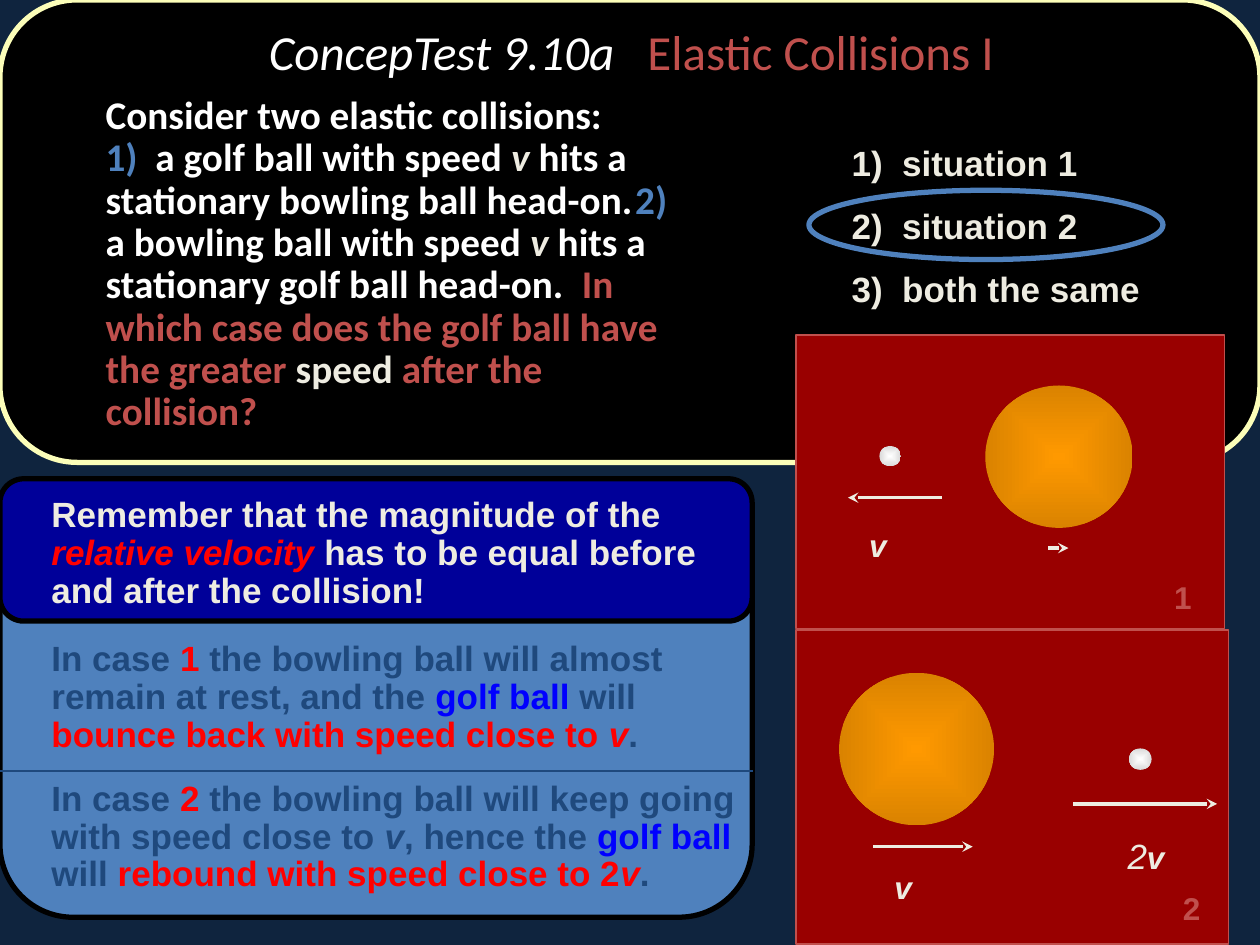
from lxml import etree
from pptx import Presentation
from pptx.dml.color import RGBColor
from pptx.enum.shapes import MSO_CONNECTOR, MSO_SHAPE as SHAPE
from pptx.enum.text import MSO_ANCHOR, PP_ALIGN
from pptx.oxml import parse_xml
from pptx.oxml.ns import nsdecls, qn
from pptx.util import Inches, Pt

NAVY = RGBColor(0x0F, 0x24, 0x3E)
BLACK = RGBColor(0x00, 0x00, 0x00)
WHITE = RGBColor(0xFF, 0xFF, 0xFF)
CREAM = RGBColor(0xEE, 0xEC, 0xE1)
YELLOW = RGBColor(0xFC, 0xFE, 0xB9)
SKY = RGBColor(0x4F, 0x81, 0xBD)
DEEP_BLUE = RGBColor(0x00, 0x00, 0x99)
BLUE = RGBColor(0x00, 0x00, 0xFF)
SLATE = RGBColor(0x1F, 0x49, 0x7D)
BRICK = RGBColor(0xC0, 0x50, 0x4D)
MAROON = RGBColor(0x99, 0x00, 0x00)
RED = RGBColor(0xFF, 0x00, 0x00)
ORANGE = RGBColor(0xFF, 0x99, 0x00)

deck = Presentation()
deck.slide_width, deck.slide_height = Inches(10), Inches(7.5)
page = deck.slides.add_slide(deck.slide_layouts[6])
page.background.fill.solid()
page.background.fill.fore_color.rgb = NAVY


def add_panel(kind, at, fill=None, line=None, width=3):
    panel = page.shapes.add_shape(kind, *map(Inches, at))
    panel.shadow.inherit = False
    if fill is None:
        panel.fill.background()
    else:
        panel.fill.solid()
        panel.fill.fore_color.rgb = fill
    if line is None:
        panel.line.fill.background()
    else:
        panel.line.color.rgb = line
        panel.line.width = Pt(width)
    return panel


def add_text(at, paragraphs, size=20, font="Arial", bold=True, hang=0.31,
             spacing=0.9, before=0, wrap=True):
    """Each paragraph is a list of (text, colour[, italic[, size, bold]])."""
    box = page.shapes.add_textbox(*map(Inches, at))
    frame = box.text_frame
    frame.word_wrap = wrap
    for number, spans in enumerate(paragraphs):
        para = frame.add_paragraph() if number else frame.paragraphs[0]
        para.line_spacing = spacing
        para.space_before = Pt(before)
        if hang:
            properties = para._p.get_or_add_pPr()
            properties.set("marL", str(Inches(hang)))
            properties.set("indent", str(-Inches(hang)))
        for text, colour, *style in spans:
            italic, span_size, span_bold = style + [False, size, bold][len(style):]
            span = para.add_run()
            span.text = text
            span.font.name = font
            span.font.size = Pt(span_size)
            span.font.bold = span_bold
            span.font.italic = italic
            span.font.color.rgb = colour
    return box


# Explanation panel and its reminder
add_panel(SHAPE.ROUNDED_RECTANGLE, (0, 3.8, 5.97, 3.48), SKY, BLACK)
add_panel(SHAPE.ROUNDED_RECTANGLE, (0, 3.8, 5.97, 1.13), DEEP_BLUE, BLACK)
add_text((0, 3.9, 5.9, 1), [[
    ("\tRemember that the magnitude of the ", CREAM),
    ("relative velocity ", RED, True),
    ("has to be equal before and after the collision!", CREAM)]])

# Question panel, title and ring around the answer
add_panel(SHAPE.ROUNDED_RECTANGLE, (0, 0, 10, 3.67), BLACK, YELLOW)
title = add_text((1.02, 0, 7.98, 0.87), [[
    ("ConcepTest 9.10a   ", WHITE, True),
    ("Elastic Collisions I", BRICK)]], 28, "Calibri", bold=False, hang=0)
title.text_frame.vertical_anchor = MSO_ANCHOR.MIDDLE
title.text_frame.paragraphs[0].alignment = PP_ALIGN.CENTER
add_panel(SHAPE.OVAL, (6.42, 1.51, 2.81, 0.55), line=SKY)

# Diagrams of the two situations
for at in [(6.32, 2.66, 3.4, 2.33), (6.32, 5, 3.43, 2.49)]:
    add_panel(SHAPE.RECTANGLE, at, MAROON, BRICK, 1)

# Balls, shaded from the centre outwards
balls = [
    ((6.98, 3.54, 0.17, 0.16), WHITE, 85),
    ((7.82, 3.06, 1.17, 1.13), ORANGE, 70),
    ((8.96, 5.94, 0.18, 0.17), WHITE, 70),
    ((6.66, 5.34, 1.23, 1.21), ORANGE, 70),
]
for at, colour, _ in balls:
    ball = add_panel(SHAPE.OVAL, at, colour)
    solid = ball._element.spPr.find(qn("a:solidFill"))
    solid.getparent().replace(solid, parse_xml(
        f'<a:gradFill {nsdecls("a")} rotWithShape="1"><a:gsLst>'
        f'<a:gs pos="0"><a:srgbClr val="{colour}"/></a:gs>'
        f'<a:gs pos="100000"><a:srgbClr val="{colour}">'
        '<a:shade val="70000"/></a:srgbClr></a:gs></a:gsLst>'
        '<a:path path="shape"><a:fillToRect l="50000" t="50000" '
        'r="50000" b="50000"/></a:path></a:gradFill>'))

# Velocity arrows and the divider: start, end, height, colour, width, arrowhead
lines = [
    (6.73, 7.48, 3.95, CREAM, 2, "headEnd"),
    (8.32, 8.48, 4.35, CREAM, 2, "tailEnd"),
    (6.93, 7.72, 6.72, CREAM, 2, "tailEnd"),
    (8.52, 9.66, 6.38, CREAM, 2, "tailEnd"),
    (0, 5.98, 6.12, SLATE, 0.75, None),
]
for start, end, height, colour, width, arrowhead in lines:
    line = page.shapes.add_connector(
        MSO_CONNECTOR.STRAIGHT,
        Inches(start), Inches(height), Inches(end), Inches(height))
    line.line.color.rgb = colour
    line.line.width = Pt(width)
    if arrowhead:
        etree.SubElement(line.line._get_or_add_ln(),
                         qn("a:" + arrowhead), type="stealth")
    etree.SubElement(line._element.spPr, qn("a:effectLst"))

# Diagram labels
labels = [
    ((6.8, 4.16, 0.39, 0.46), [("v", CREAM, True)]),
    ((9.22, 4.57, 0.39, 0.46), [("1", BRICK)]),
    ((7, 6.87, 0.46, 0.46), [("v", CREAM, True)]),
    ((9.29, 7.04, 0.39, 0.46), [("2", BRICK)]),
    ((8.85, 6.61, 0.62, 0.46), [("2", CREAM, True, 20, False),
                                ("v", CREAM, True)]),
]
for at, spans in labels:
    add_text(at, [spans], size=18, wrap=False)

# Explanations of the two cases
add_text((0, 5.04, 5.9, 1), [[
    ("\tIn case ", SLATE), ("1", RED),
    (" the bowling ball will almost remain at rest, and the ", SLATE),
    ("golf ball", BLUE), (" will ", SLATE),
    ("bounce back with speed close to ", RED), ("v", RED, True),
    (".", SLATE)]])
add_text((0, 6.15, 6.07, 1), [[
    ("\tIn case ", SLATE), ("2", RED),
    (" the bowling ball will keep going with speed close to ", SLATE),
    ("v", SLATE, True), (", hence the ", SLATE),
    ("golf ball", BLUE), (" will ", SLATE),
    ("rebound with speed close to 2", RED), ("v", RED, True),
    (".", SLATE)]])

# Answer choices
choices = ["1)  situation 1", "2)  situation 2", "3)  both the same"]
add_text((6.66, 1.01, 3.11, 1.89), [[(choice, CREAM)] for choice in choices],
         hang=0.44, spacing=1.2, before=7)

# Question
add_text((0.3, 0.71, 5.28, 3.02), [[
    (" \tConsider two elastic collisions: \t", WHITE), ("1)", SKY),
    ("  a golf ball with speed ", WHITE), ("v", CREAM, True),
    (" hits a stationary bowling ball head-on. \t", WHITE), ("2)", SKY),
    ("  a bowling ball with speed ", WHITE), ("v", CREAM, True),
    (" hits a stationary golf ball head-on.  ", WHITE),
    ("In which case does the golf ball have the greater ", BRICK),
    ("speed", CREAM), (" after the collision?", BRICK)]],
    22.4, "Calibri", hang=0.44)

deck.save("out.pptx")
